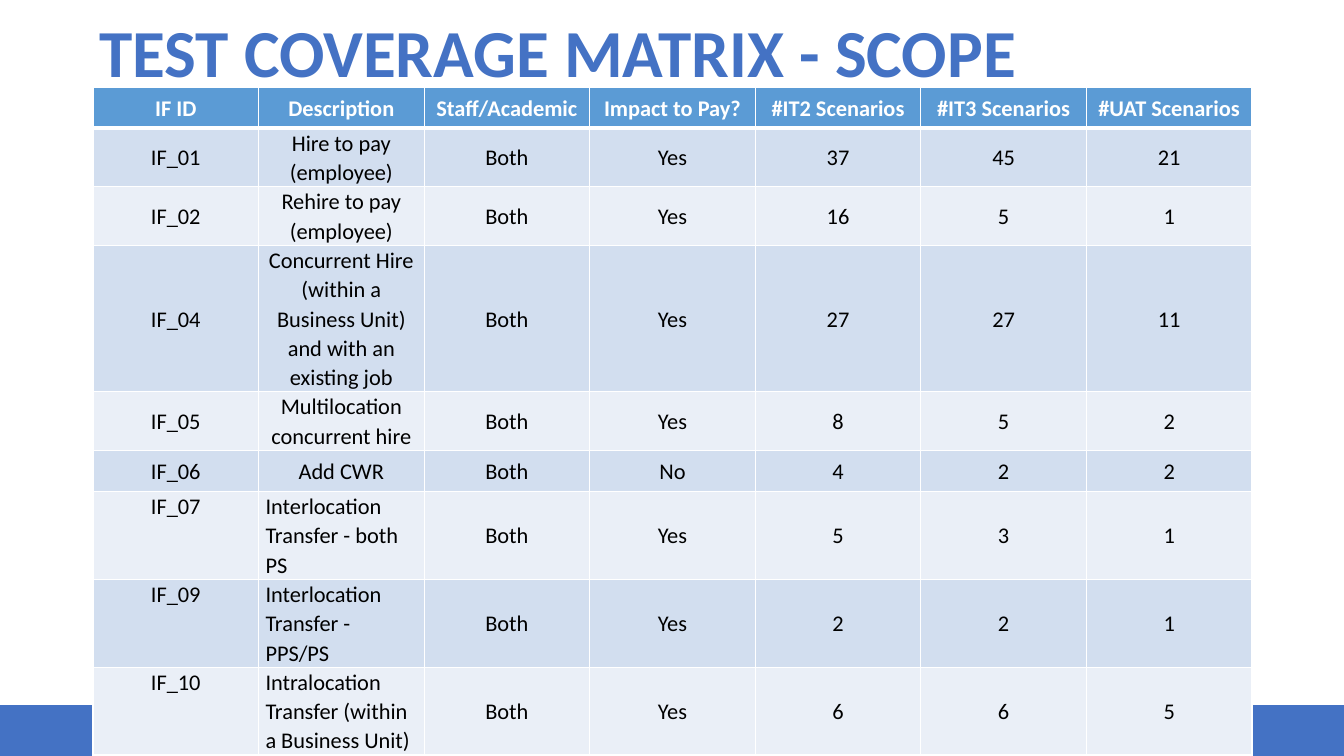
from lxml import etree
from pptx import Presentation
from pptx.dml.color import RGBColor
from pptx.enum.shapes import MSO_SHAPE
from pptx.enum.text import MSO_ANCHOR, MSO_AUTO_SIZE, PP_ALIGN
from pptx.oxml.ns import qn
from pptx.util import Emu, Pt

PX = 914400 / 100.8
COLORS = {
    "blue": "4472C4",
    "header": "5B9BD5",
    "odd": "D2DEEF",
    "even": "EAEFF7",
    "white": "FFFFFF",
    "black": "000000",
}
HEADINGS = ["IF ID", "Description", "Staff/Academic", "Impact to Pay?",
            "#IT2 Scenarios", "#IT3 Scenarios", "#UAT Scenarios"]
SCENARIOS = [
    ["IF_01", "Hire to pay (employee)", "Both", "Yes", "37", "45", "21"],
    ["IF_02", "Rehire to pay (employee)", "Both", "Yes", "16", "5", "1"],
    ["IF_04", "Concurrent Hire (within a Business Unit) and with an existing job",
     "Both", "Yes", "27", "27", "11"],
    ["IF_05", "Multilocation concurrent hire", "Both", "Yes", "8", "5", "2"],
    ["IF_06", "Add CWR", "Both", "No", "4", "2", "2"],
    ["IF_07", "Interlocation Transfer - both PS", "Both", "Yes", "5", "3", "1"],
    ["IF_09", "Interlocation Transfer - PPS/PS", "Both", "Yes", "2", "2", "1"],
    ["IF_10", "Intralocation Transfer (within a Business Unit)",
     "Both", "Yes", "6", "6", "5"],
]
FIRST_TRANSFER_ROW = 6


def px(value):
    return Emu(round(value * PX))


def color(name):
    return RGBColor.from_string(COLORS[name])


class SlideBuilder:
    font = "Calibri"

    def __init__(self, slide):
        self.slide = slide

    def add_run(self, paragraph, text, size, color_name, bold=False):
        run = paragraph.add_run()
        run.text = text
        run.font.name = self.font
        run.font.size = Pt(size)
        run.font.bold = bold
        run.font.color.rgb = color(color_name)

    def place(self, shape, left, top, width, height):
        shape.left, shape.top = px(left), px(top)
        shape.width, shape.height = px(width), px(height)

    def title(self, text, *box):
        shape = self.slide.shapes.title
        self.place(shape, *box)
        frame = shape.text_frame
        frame.word_wrap = True
        frame.auto_size = MSO_AUTO_SIZE.NONE
        frame.vertical_anchor = MSO_ANCHOR.TOP
        paragraph = frame.paragraphs[0]
        paragraph.alignment = PP_ALIGN.LEFT
        paragraph.line_spacing = 0.9
        self.add_run(paragraph, text, 48, "blue", bold=True)

    def band(self, color_name, *box):
        shape = self.slide.shapes.add_shape(MSO_SHAPE.RECTANGLE, *map(px, box))
        shape.shadow.inherit = False
        shape.fill.solid()
        shape.fill.fore_color.rgb = color(color_name)
        shape.line.fill.background()

    def borders(self, cell, widths):
        properties = cell._tc.get_or_add_tcPr()
        for index, (side, width) in enumerate(widths.items()):
            line = etree.Element(qn(f"a:ln{side}"), w=str(Pt(width)))
            fill = etree.SubElement(line, qn("a:solidFill"))
            etree.SubElement(fill, qn("a:srgbClr"), val=COLORS["white"])
            properties.insert(index, line)

    def cell(self, cell, text, fill, text_color, bold, align, anchor):
        cell.fill.solid()
        cell.fill.fore_color.rgb = color(fill)
        cell.margin_left = cell.margin_right = px(7)
        cell.margin_top = cell.margin_bottom = 0
        cell.vertical_anchor = anchor
        paragraph = cell.text_frame.paragraphs[0]
        paragraph.alignment = align
        paragraph.line_spacing = 1.07
        self.add_run(paragraph, text, 16, text_color, bold)

    def table(self, rows, *box):
        table = self.slide.shapes.add_table(
            len(rows), len(rows[0]), *map(px, box)).table
        for row, values in enumerate(rows):
            is_header = row == 0
            fill = "header" if is_header else "odd" if row % 2 else "even"
            widths = {"L": 1, "R": 1, "T": 3 if row == 1 else 1,
                      "B": 3 if is_header else 1}
            for column, text in enumerate(values):
                # Transfer rows keep their ID and description at the top
                at_top = row >= FIRST_TRANSFER_ROW and column < 2
                align = PP_ALIGN.LEFT if at_top and column == 1 else PP_ALIGN.CENTER
                anchor = MSO_ANCHOR.TOP if at_top else MSO_ANCHOR.MIDDLE
                cell = table.cell(row, column)
                self.cell(cell, text, fill, "white" if is_header else "black",
                          is_header, align, anchor)
                self.borders(cell, widths)


def main():
    presentation = Presentation()
    presentation.slide_width, presentation.slide_height = px(1344), px(756)
    builder = SlideBuilder(
        presentation.slides.add_slide(presentation.slide_layouts[5]))

    # Footer band
    builder.band("blue", 0, 705, 1344, 51)

    # Title
    builder.title("TEST COVERAGE MATRIX - SCOPE", 89, 14, 1165, 97)

    # Coverage table
    rows = [HEADINGS] + SCENARIOS
    builder.table(rows, 93, 87, 1159, 41 * len(rows))

    presentation.save("out.pptx")


if __name__ == "__main__":
    main()
